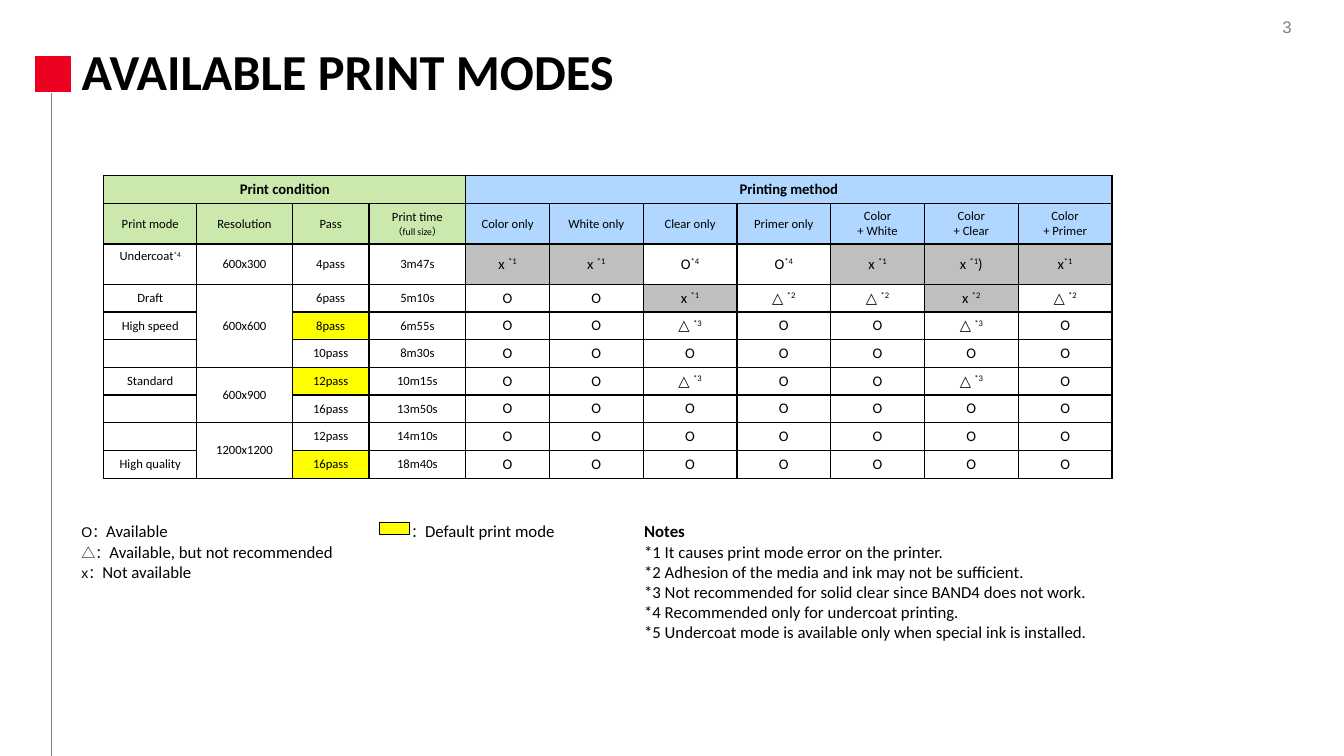
from lxml.etree import SubElement
from pptx import Presentation
from pptx.dml.color import RGBColor
from pptx.enum.shapes import MSO_CONNECTOR as Connector, MSO_SHAPE as Shape
from pptx.enum.text import MSO_ANCHOR as Anchor, PP_ALIGN as Align
from pptx.oxml.ns import qn
from pptx.util import Inches, Pt

COLORS = {
    "black": "000000", "grey": "808080", "red": "EC0121", "yellow": "FFFF00",
    "green": "CCE9AD", "blue": "AFD7FF", "blocked": "BFBFBF",
}

COLUMN_WIDTHS = [0.92, 0.95, 0.76, 0.96, 0.83] + [0.93] * 6
ROW_HEIGHTS = [0.28, 0.4, 0.4] + [0.275] * 7
CONDITION_COLUMNS = 4
HEADINGS = [
    "Print mode", "Resolution", "Pass", "Print time\n（full size）",
    "Color only", "White only", "Clear only", "Primer only",
    "Color\n+ White", "Color\n+ Clear", "Color\n+ Primer",
]
AVAILABLE = ["O"] * 7
PARTIAL_CLEAR = ["O", "O", "△ *3", "O", "O", "△ *3", "O"]
PRINT_MODES = [
    ["Undercoat*4", "600x300", "4pass", "3m47s",
     "x *1", "x *1", "O*4", "O*4", "x *1", "x *1)", "x*1"],
    ["Draft", "600x600", "6pass", "5m10s",
     "O", "O", "x *1", "△ *2", "△ *2", "x *2", "△ *2"],
    ["High speed", "", "8pass", "6m55s"] + PARTIAL_CLEAR,
    ["", "", "10pass", "8m30s"] + AVAILABLE,
    ["Standard", "600x900", "12pass", "10m15s"] + PARTIAL_CLEAR,
    ["", "", "16pass", "13m50s"] + AVAILABLE,
    ["", "1200x1200", "12pass", "14m10s"] + AVAILABLE,
    ["High quality", "", "16pass", "18m40s"] + AVAILABLE,
]
DEFAULT_MODES = {"High speed", "Standard", "High quality"}
# First and last table row of each shared resolution
RESOLUTION_SPANS = [(3, 5), (6, 7), (8, 9)]

LEGEND = [("O：", "Available"), ("△：", "Available, but not recommended"),
          ("x：", "Not available")]
NOTES = [
    "*1 It causes print mode error on the printer.",
    "*2 Adhesion of the media and ink may not be sufficient.",
    "*3 Not recommended for solid clear since BAND4 does not work.",
    "*4 Recommended only for undercoat printing.",
    "*5 Undercoat mode is available only when special ink is installed.",
]


def rgb(name):
    return RGBColor.from_string(COLORS[name])


def add_span(para, text, size, font="Calibri", color="black", bold=False, raised=False):
    span = para.add_run()
    span.text = text
    span.font.size = Pt(size)
    span.font.name = font
    span.font.bold = bold
    span.font.color.rgb = rgb(color)
    if raised:
        span.font._element.set("baseline", "30000")


def add_text_box(page, left, top, width, height, count):
    """Add a wrapping text box and return its empty paragraphs."""
    box = page.shapes.add_textbox(Inches(left), Inches(top), Inches(width), Inches(height))
    frame = box.text_frame
    frame.word_wrap = True
    return [frame.paragraphs[0]] + [frame.add_paragraph() for _ in range(count - 1)]


def add_block(page, left, top, width, height, fill, line, weight):
    block = page.shapes.add_shape(
        Shape.RECTANGLE, Inches(left), Inches(top), Inches(width), Inches(height))
    block.shadow.inherit = False
    block.fill.solid()
    block.fill.fore_color.rgb = rgb(fill)
    block.line.color.rgb = rgb(line)
    block.line.width = Pt(weight)


def add_rule(page, left, top, bottom):
    rule = page.shapes.add_connector(
        Connector.STRAIGHT, Inches(left), Inches(top), Inches(left), Inches(bottom))
    rule.line.color.rgb = rgb("grey")
    rule.line.width = Pt(1)
    SubElement(rule._element.spPr, qn("a:effectLst"))


def add_title(page, text):
    title = page.shapes.title
    title.left, title.top = Inches(0.71), Inches(0.39)
    title.width, title.height = Inches(10.31), Inches(0.7)
    title.text_frame.vertical_anchor = Anchor.MIDDLE
    para = title.text_frame.paragraphs[0]
    para.alignment = Align.LEFT
    para.line_spacing = 0.9
    add_span(para, text, 36, bold=True)


def style_cell(cell, fill):
    cell.margin_left = cell.margin_right = cell.margin_top = cell.margin_bottom = 0
    cell.vertical_anchor = Anchor.MIDDLE
    properties = cell._tc.get_or_add_tcPr()
    for side in ("lnL", "lnR", "lnT", "lnB"):
        edge = SubElement(properties, qn(f"a:{side}"), w=str(Pt(1)))
        SubElement(SubElement(edge, qn("a:solidFill")), qn("a:srgbClr"), val=COLORS["black"])
    if fill:
        cell.fill.solid()
        cell.fill.fore_color.rgb = rgb(fill)
    else:
        cell.fill.background()


def fill_cell(cell, text, size, bold=False):
    """Write one paragraph a line, raising a note mark such as *1."""
    frame = cell.text_frame
    for index, line in enumerate(text.split("\n")):
        para = frame.add_paragraph() if index else frame.paragraphs[0]
        para.alignment = Align.CENTER
        if not line:
            SubElement(para._p, qn("a:endParaRPr"), sz=str(size * 100))
            continue
        body, star, note = line.partition("*")
        add_span(para, body, 7 if body.startswith("（") else size, bold=bold)
        if star:
            add_span(para, star + note[:1], size, raised=True)
        if note[1:]:
            add_span(para, note[1:], size)


def cell_fill(row, column, text):
    if row < 2:
        return "green" if column < CONDITION_COLUMNS else "blue"
    if column == 2 and PRINT_MODES[row - 2][0] in DEFAULT_MODES:
        return "yellow"
    if column >= CONDITION_COLUMNS and text.startswith("x"):
        return "blocked"
    return None


def add_modes_table(page):
    groups = [""] * len(HEADINGS)
    groups[0], groups[CONDITION_COLUMNS] = "Print condition", "Printing method"
    rows = [groups, HEADINGS] + PRINT_MODES
    table = page.shapes.add_table(
        len(rows), len(HEADINGS), Inches(1.03), Inches(1.74), Inches(9.99), Inches(3)).table
    table.first_row = table.horz_banding = False
    for column, width in zip(table.columns, COLUMN_WIDTHS):
        column.width = Inches(width)
    for row, height in zip(table.rows, ROW_HEIGHTS):
        row.height = Inches(height)
    for row, texts in enumerate(rows):
        for column, text in enumerate(texts):
            cell = table.cell(row, column)
            style_cell(cell, cell_fill(row, column, text))
            is_mark = row >= 2 and column >= CONDITION_COLUMNS
            size = 10.5 if is_mark or (row == 0 and text) else 9
            fill_cell(cell, text, size, bold=row == 0)
    # Group headings and shared resolutions
    last = len(HEADINGS) - 1
    table.cell(0, 0).merge(table.cell(0, CONDITION_COLUMNS - 1))
    table.cell(0, CONDITION_COLUMNS).merge(table.cell(0, last))
    for first_row, last_row in RESOLUTION_SPANS:
        table.cell(first_row, 1).merge(table.cell(last_row, 1))
    undercoat = table.cell(2, 0)
    undercoat.vertical_anchor = Anchor.TOP
    undercoat.margin_top = Inches(0.05)


def add_legend(page):
    for para, (symbol, meaning) in zip(
            add_text_box(page, 0.71, 5.12, 2.83, 0.71, len(LEGEND)), LEGEND):
        add_span(para, symbol, 10, "Arial")
        add_span(para, meaning, 12)
    add_block(page, 3.76, 5.18, 0.3, 0.12, "yellow", "black", 0.75)
    para = add_text_box(page, 3.98, 5.12, 1.64, 0.3, 1)[0]
    add_span(para, "：", 10, "Arial")
    add_span(para, "Default print mode", 12)


def add_notes(page):
    heading, *paras = add_text_box(page, 6.29, 5.12, 4.73, 1.31, len(NOTES) + 1)
    add_span(heading, "Notes", 12, bold=True)
    for para, note in zip(paras, NOTES):
        add_span(para, note, 12)


def main():
    deck = Presentation()
    deck.slide_width, deck.slide_height = Inches(13.33), Inches(7.5)
    page = deck.slides.add_slide(deck.slide_layouts[5])

    # Page furniture
    number = add_text_box(page, 12.42, 0.12, 0.69, 0.3, 1)[0]
    number.alignment = Align.CENTER
    add_span(number, "3", 12, "Arial", "grey")
    add_block(page, 0.35, 0.56, 0.35, 0.35, "red", "red", 1)
    add_rule(page, 0.51, 0.92, 7.5)

    # Content
    add_title(page, "AVAILABLE PRINT MODES")
    add_legend(page)
    add_notes(page)
    add_modes_table(page)
    deck.save("out.pptx")


if __name__ == "__main__":
    main()
